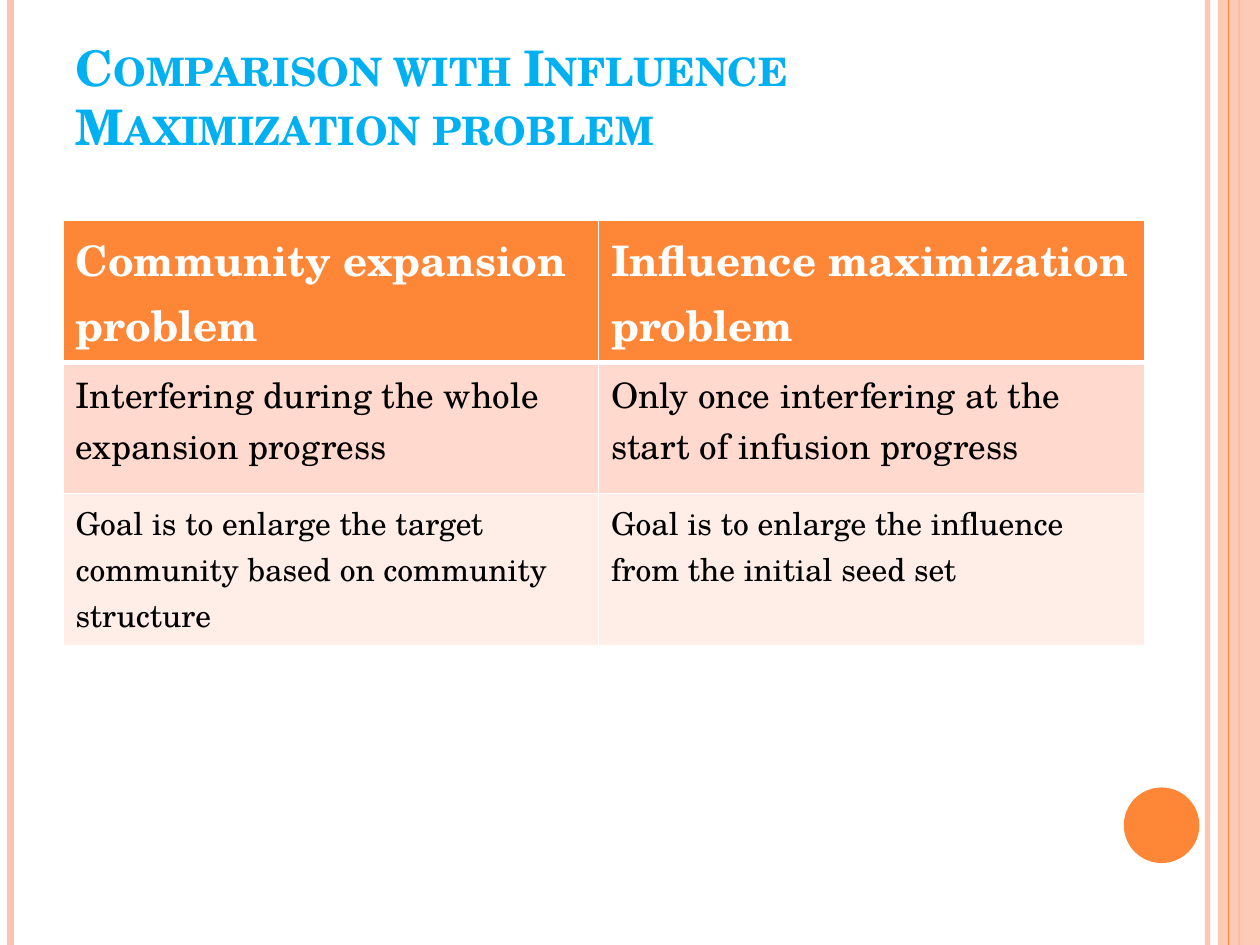
from lxml import etree
from pptx import Presentation
from pptx.dml.color import RGBColor
from pptx.enum.shapes import MSO_CONNECTOR, MSO_SHAPE
from pptx.enum.text import MSO_ANCHOR
from pptx.oxml.ns import qn
from pptx.util import Pt

LINE = MSO_CONNECTOR.STRAIGHT
RECT, OVAL = MSO_SHAPE.RECTANGLE, MSO_SHAPE.OVAL
BOTTOM = MSO_ANCHOR.BOTTOM
FONT = "TeX Gyre Schola"
WIDE, HIGH = 720, 540
PEACH, ORANGE, WHITE, BLACK = "FEC3AE", "FE8637", "FFFFFF", "000000"

TITLE = "Comparison with Influence Maximization problem"
ROWS = [
    ("Community expansion problem", "Influence maximization problem"),
    ("Interfering during the whole expansion progress",
     "Only once interfering at the start of infusion progress"),
    ("Goal is to enlarge the target community based on community structure",
     "Goal is to enlarge the influence from the initial seed set"),
]
STYLES = [  # height, fill, top border, bottom border, font
    (81, ORANGE, 1, 3, {"size": Pt(24), "bold": True, "color": WHITE}),
    (75, "FFD9CE", 3, 1, {"size": Pt(20), "bold": False, "color": BLACK}),
    (87, "FFEDE8", 1, 1, {"size": Pt(18), "bold": False, "color": BLACK}),
]
COLS = (306, 312)
# x, colour, width, opacity in percent
BACK = [(690, PEACH, 3, 93), (6, PEACH, 4.5, 100), (708, ORANGE, 1.5, 100)]
FRONT = [(702, ORANGE, 0.75, 100)]


def rgb(code):
    return RGBColor.from_string(code)


def fade(part, pct):
    """Set the opacity of the first colour in an XML part."""
    if pct < 100:
        tint = next(part.iter(qn("a:srgbClr")))
        etree.SubElement(tint, qn("a:alpha"), val=str(pct * 1000))


def style(font, look):
    font.name = FONT
    for key, val in look.items():
        if key == "color":
            font.color.rgb = rgb(val)
        else:
            setattr(font, key, val)


def rules(slide, specs):
    """Draw full-height vertical lines."""
    for x, tint, width, pct in specs:
        rule = slide.shapes.add_connector(LINE, Pt(x), 0, Pt(x), Pt(HIGH))
        rule.line.color.rgb = rgb(tint)
        rule.line.width = Pt(width)
        props = rule._element.spPr
        fade(props, pct)
        etree.SubElement(props, qn("a:effectLst"))


def block(slide, kind, box, tint, pct=100):
    shape = slide.shapes.add_shape(kind, *map(Pt, box))
    shape.shadow.inherit = False
    shape.fill.solid()
    shape.fill.fore_color.rgb = rgb(tint)
    shape.line.fill.background()
    fade(shape._element.spPr, pct)


def heading(slide):
    frame = slide.shapes.add_textbox(
        Pt(36), Pt(2.4), Pt(618), Pt(90)).text_frame
    frame.word_wrap = True
    frame.vertical_anchor = BOTTOM
    run = frame.paragraphs[0].add_run()
    run.text = TITLE
    style(run.font, {"size": Pt(28), "bold": True, "color": "00B0F0"})
    run.font._element.set("cap", "small")


def border(cell, top, base):
    props = cell._tc.get_or_add_tcPr()
    sides = {"L": 1, "R": 1, "T": top, "B": base}
    for at, (side, width) in enumerate(sides.items()):
        edge = etree.Element(qn("a:ln" + side), w=str(Pt(width)))
        fill = etree.SubElement(edge, qn("a:solidFill"))
        etree.SubElement(fill, qn("a:srgbClr"), val=WHITE)
        props.insert(at, edge)


def grid(slide):
    table = slide.shapes.add_table(
        len(ROWS), len(COLS), Pt(36), Pt(126),
        Pt(sum(COLS)), Pt(sum(row[0] for row in STYLES))).table
    for col, width in zip(table.columns, COLS):
        col.width = Pt(width)
    for row, texts, (high, tint, top, base, look) in zip(
            table.rows, ROWS, STYLES):
        row.height = Pt(high)
        for cell, text in zip(row.cells, texts):
            cell.fill.solid()
            cell.fill.fore_color.rgb = rgb(tint)
            border(cell, top, base)
            run = cell.text_frame.paragraphs[0].add_run()
            run.text = text
            style(run.font, look)


def main():
    deck = Presentation()
    deck.slide_width, deck.slide_height = Pt(WIDE), Pt(HIGH)
    slide = deck.slides.add_slide(deck.slide_layouts[6])
    rules(slide, BACK)
    block(slide, RECT, (696, 0, 24, HIGH), PEACH, 87)
    rules(slide, FRONT)
    block(slide, OVAL, (642.2, 450, 43.2, 43.2), ORANGE)
    heading(slide)
    grid(slide)
    deck.save("out.pptx")


if __name__ == "__main__":
    main()
